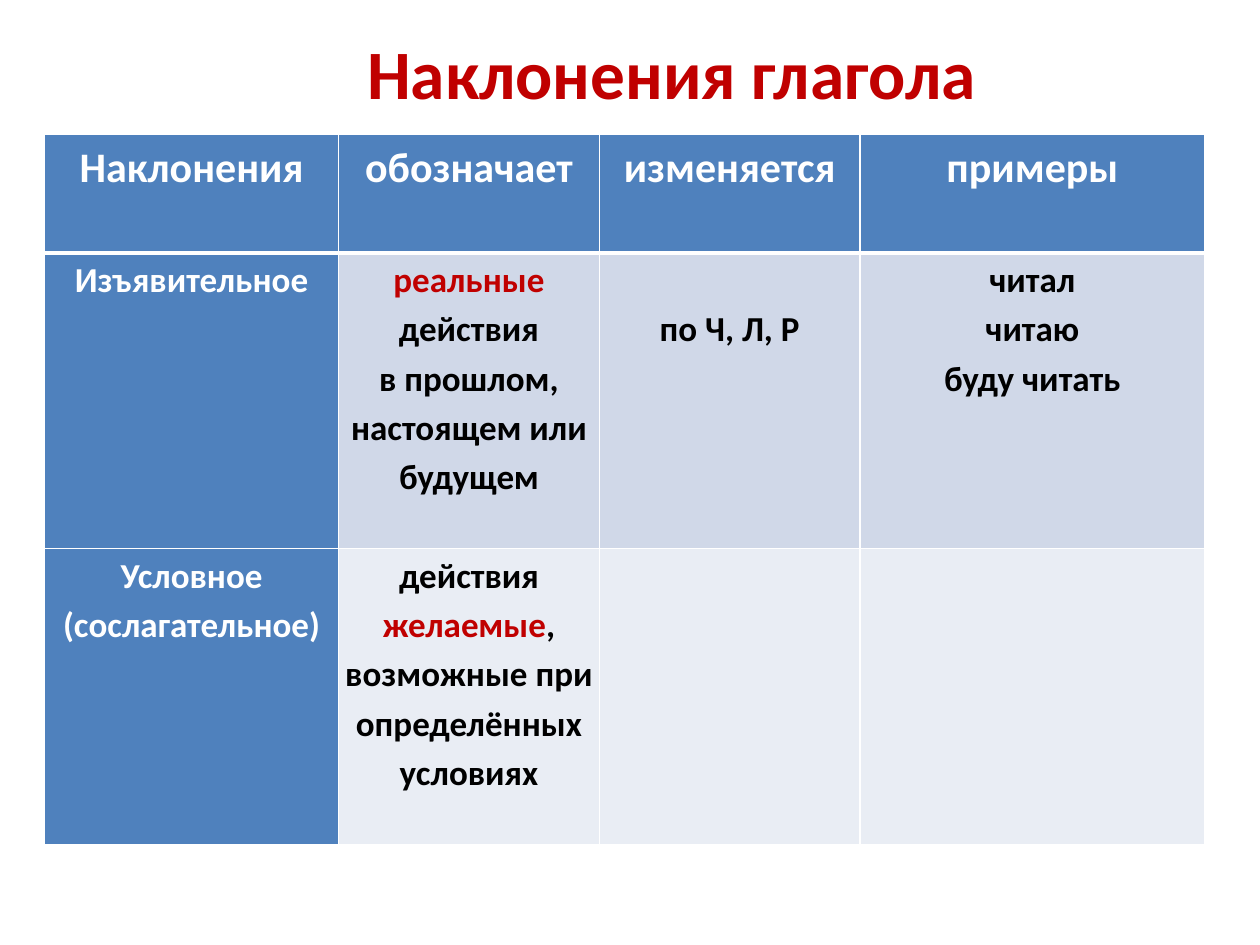
from dataclasses import dataclass

from lxml.etree import SubElement
from pptx import Presentation
from pptx.dml.color import RGBColor as Color
from pptx.enum.text import MSO_ANCHOR as Anchor, PP_ALIGN as Align
from pptx.oxml.ns import qn
from pptx.table import _Cell as TableCell
from pptx.text.text import _Paragraph as Paragraph
from pptx.util import Pt


@dataclass(frozen=True)
class Theme:
    font: str = "Calibri"
    accent: str = "C00000"
    ink: str = "000000"
    white: str = "FFFFFF"
    blue: str = "4F81BD"
    bands: tuple[str, str] = ("D0D8E8", "E9EDF4")
    title_size: float = 39.6
    header_size: float = 24
    body_size: float = 20
    line_spacing: float = 1.15
    thin: float = 1
    thick: float = 3


@dataclass(frozen=True)
class Piece:
    text: str
    accented: bool = False


@dataclass(frozen=True)
class Entry:
    paragraphs: tuple[tuple[Piece, ...], ...] = ()
    top_margin: float = 0


THEME = Theme()


def lines(*texts: str, top_margin: float = 0) -> Entry:
    """An entry with one plain paragraph per text."""
    return Entry(tuple((Piece(text),) for text in texts), top_margin)


COLUMN_WIDTHS = (168, 149, 149, 197)
ROW_HEIGHTS = (67.5, 169, 169)
ROWS = (
    tuple(map(lines, ("Наклонения", "обозначает", "изменяется", "примеры"))),
    (
        lines("Изъявительное"),
        Entry((
            (Piece("реальные ", True), Piece("действия")),
            (Piece("в прошлом, настоящем или будущем"),),
        )),
        lines("по Ч, Л, Р", top_margin=28),
        lines("читал", "читаю", "буду читать"),
    ),
    (
        lines("Условное", "(сослагательное)"),
        Entry(((
            Piece("действия "),
            Piece("желаемые", True),
            Piece(", возможные при определённых условиях"),
        ),)),
        Entry(),
        Entry(),
    ),
)


def add_span(para: Paragraph, text: str, size: float, color: str) -> None:
    span = para.add_run()
    span.text = text
    span.font.name = THEME.font
    span.font.size = Pt(size)
    span.font.bold = True
    span.font.color.rgb = Color.from_string(color)


def set_borders(cell: TableCell, top: float, bottom: float) -> None:
    properties = cell._tc.get_or_add_tcPr()
    widths = {"lnL": THEME.thin, "lnR": THEME.thin, "lnT": top, "lnB": bottom}
    for side, width in widths.items():
        line = SubElement(properties, qn(f"a:{side}"), w=str(Pt(width)))
        fill = SubElement(line, qn("a:solidFill"))
        SubElement(fill, qn("a:srgbClr"), val=THEME.white)


def fill_cell(cell: TableCell, entry: Entry, row: int, column: int) -> None:
    is_heading = row == 0 or column == 0
    set_borders(
        cell,
        top=THEME.thick if row == 1 else THEME.thin,
        bottom=THEME.thick if row == 0 else THEME.thin,
    )
    cell.fill.solid()
    background = THEME.blue if is_heading else THEME.bands[row - 1]
    cell.fill.fore_color.rgb = Color.from_string(background)
    cell.margin_left = cell.margin_right = Pt(3)
    cell.margin_top, cell.margin_bottom = Pt(entry.top_margin), Pt(0)

    size = THEME.header_size if row == 0 else THEME.body_size
    text_color = THEME.white if is_heading else THEME.ink
    frame = cell.text_frame
    for index, pieces in enumerate(entry.paragraphs):
        para = frame.add_paragraph() if index else frame.paragraphs[0]
        para.alignment = Align.CENTER
        para.line_spacing = THEME.line_spacing
        for piece in pieces:
            add_span(para, piece.text, size, THEME.accent if piece.accented else text_color)


def main() -> None:
    deck = Presentation()
    deck.slide_width, deck.slide_height = Pt(720), Pt(540)
    page = deck.slides.add_slide(deck.slide_layouts[5])

    # Title
    title = page.shapes.title
    title.left, title.top, title.width, title.height = Pt(60), Pt(21), Pt(648), Pt(39.6)
    title.text_frame.vertical_anchor = Anchor.MIDDLE
    heading = title.text_frame.paragraphs[0]
    heading.alignment = Align.CENTER
    add_span(heading, "Наклонения глагола", THEME.title_size, THEME.accent)

    # Table of verb moods
    table = page.shapes.add_table(
        len(ROWS), len(COLUMN_WIDTHS),
        Pt(25.5), Pt(77), Pt(sum(COLUMN_WIDTHS)), Pt(sum(ROW_HEIGHTS)),
    ).table
    for column, width in zip(table.columns, COLUMN_WIDTHS):
        column.width = Pt(width)
    for row, height in zip(table.rows, ROW_HEIGHTS):
        row.height = Pt(height)
    for row_index, entries in enumerate(ROWS):
        for column_index, entry in enumerate(entries):
            fill_cell(table.cell(row_index, column_index), entry, row_index, column_index)

    deck.save("out.pptx")


if __name__ == "__main__":
    main()
